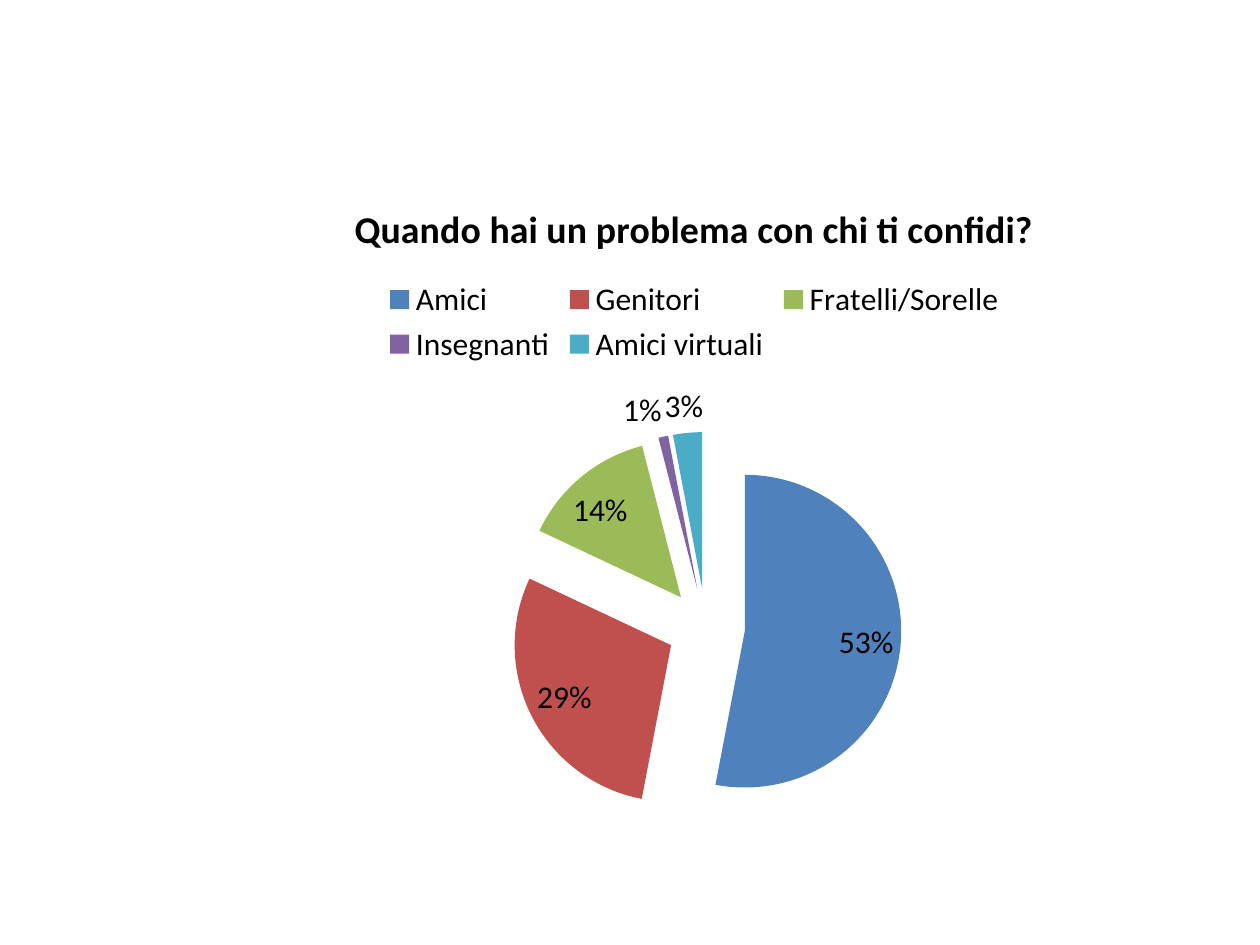
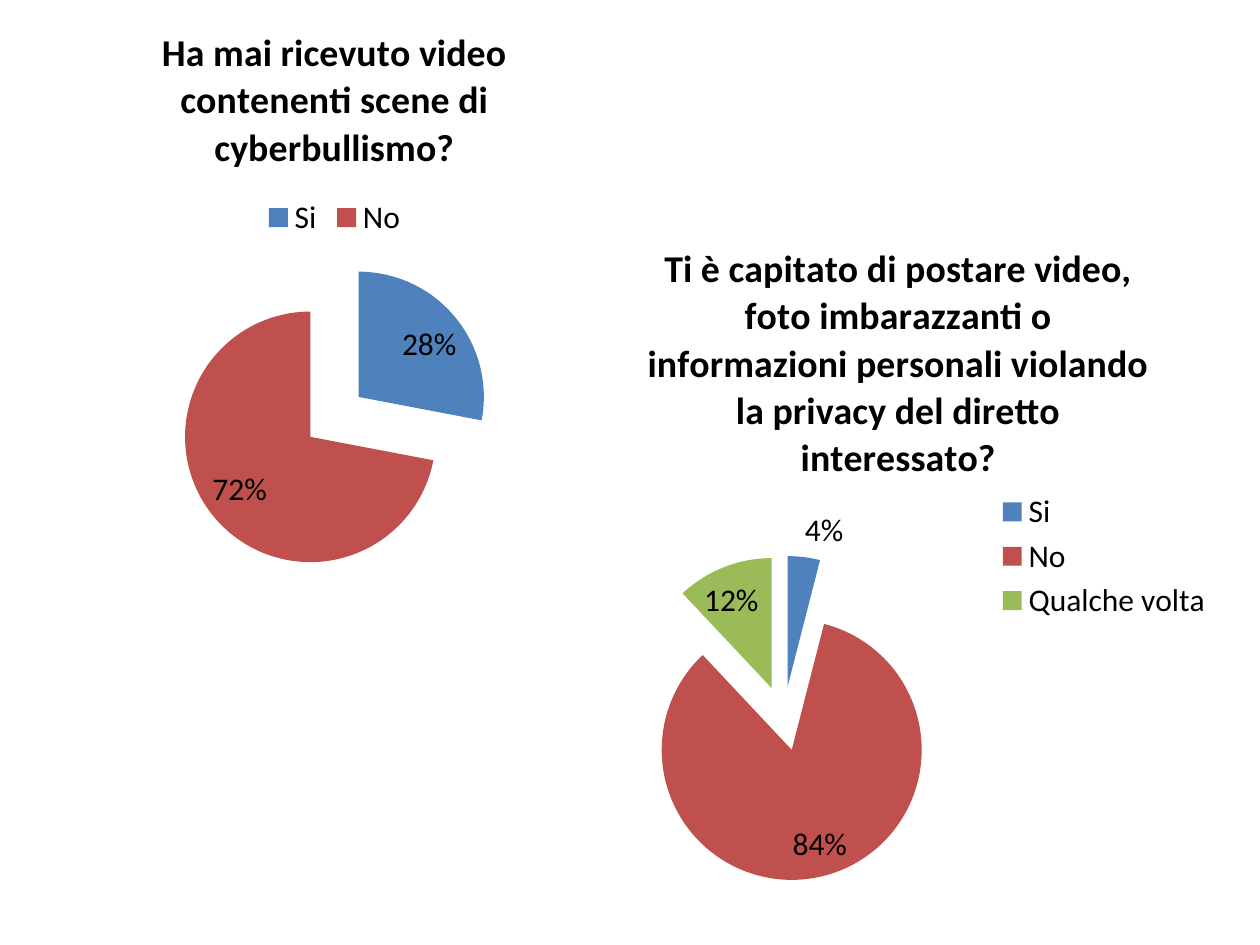
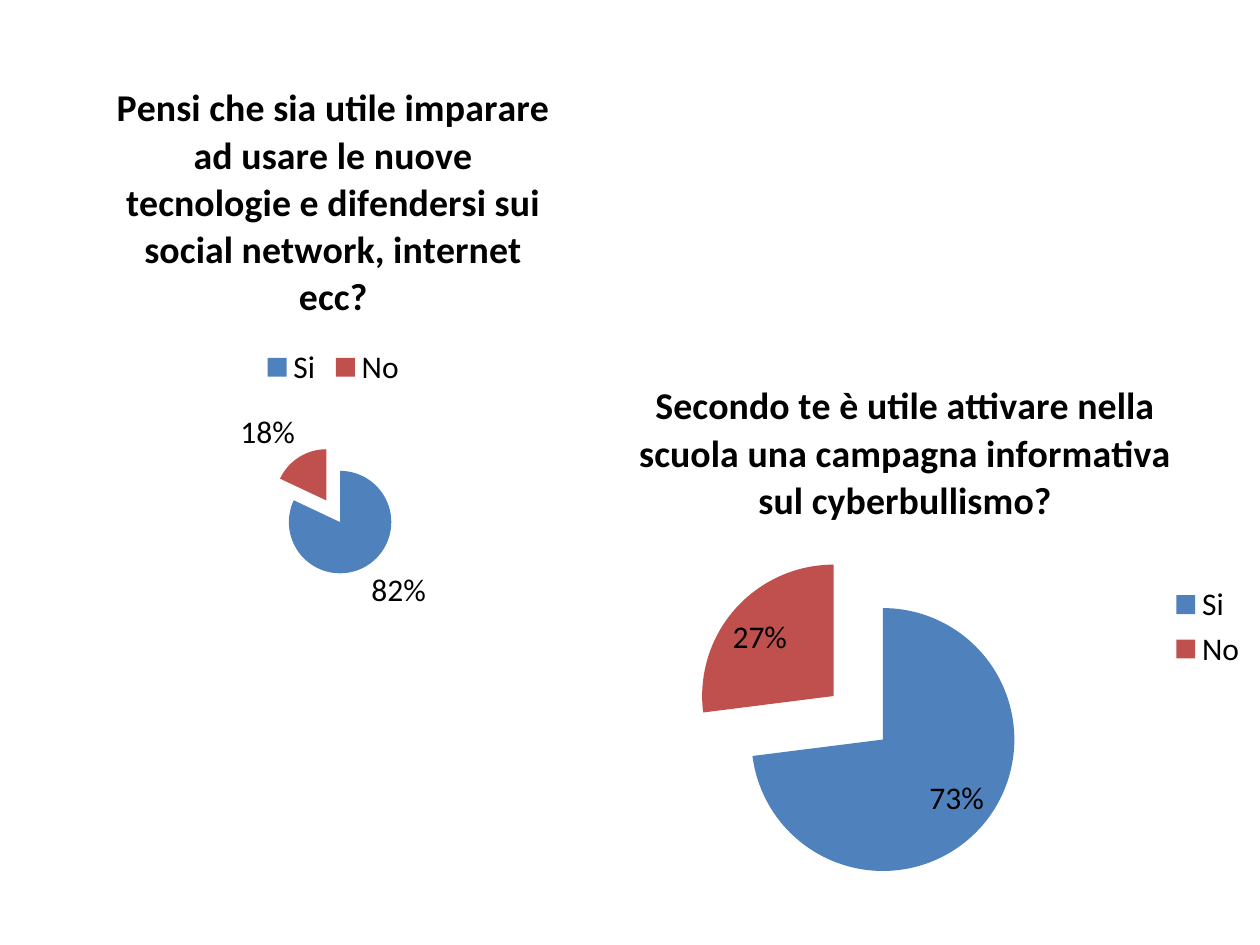
from dataclasses import dataclass

from pptx import Presentation
from pptx.chart.data import CategoryChartData
from pptx.dml.color import RGBColor
from pptx.enum.chart import XL_CHART_TYPE, XL_LABEL_POSITION, XL_LEGEND_POSITION
from pptx.slide import Slide
from pptx.text.text import Font
from pptx.util import Inches, Pt

FONT_NAME = "Calibri"
TEXT_COLOR = "000000"
TEXT_SIZE = 18
TITLE_SIZE = 21.6
SLICE_COLORS = ["4F81BD", "C0504D", "9BBB59", "8064A2", "4BACC6"]
TOP = XL_LEGEND_POSITION.TOP
RIGHT = XL_LEGEND_POSITION.RIGHT


@dataclass(frozen=True)
class SurveyPie:
    question: str
    answers: dict[str, int]
    left: float
    top: float
    width: float
    height: float
    legend: XL_LEGEND_POSITION = TOP
    series_name: str = ""


SURVEY_PAGES = [
    [
        SurveyPie(
            "Quando hai un problema con chi ti confidi?",
            {
                "Amici": 53,
                "Genitori": 29,
                "Fratelli/Sorelle": 14,
                "Insegnanti": 1,
                "Amici virtuali": 3,
            },
            1.69, 1.39, 7.64, 5.28,
        ),
    ],
    [
        SurveyPie(
            "Ha mai ricevuto video contenenti scene di cyberbullismo?",
            {"Si": 28, "No": 72},
            0, 0, 5.31, 4.69,
        ),
        SurveyPie(
            "Ti è capitato di postare video, foto imbarazzanti o informazioni "
            "personali violando la privacy del diretto interessato?",
            {"Si": 4, "No": 84, "Qualche volta": 12},
            4.53, 1.7, 5.2, 5.43,
            legend=RIGHT,
            series_name="Series 1",
        ),
    ],
    [
        SurveyPie(
            "Pensi che sia utile imparare ad usare le nuove tecnologie e "
            "difendersi sui social network, internet ecc?",
            {"Si": 82, "No": 18},
            0.35, 0.44, 4.59, 4.56,
        ),
        SurveyPie(
            "Secondo te è utile attivare nella scuola una campagna informativa "
            "sul cyberbullismo?",
            {"Si": 73, "No": 27},
            4.37, 2.81, 5.63, 4.33,
            legend=RIGHT,
        ),
    ],
]


def color(value: str) -> RGBColor:
    return RGBColor.from_string(value)


def style_font(font: Font, size: float, bold: bool = False) -> None:
    font.name = FONT_NAME
    font.size = Pt(size)
    font.bold = bold
    font.color.rgb = color(TEXT_COLOR)


def add_survey_pie(page: Slide, pie: SurveyPie) -> None:
    data = CategoryChartData()
    data.categories = list(pie.answers)
    data.add_series(pie.series_name or pie.question, list(pie.answers.values()))
    chart = page.shapes.add_chart(
        XL_CHART_TYPE.PIE_EXPLODED,
        Inches(pie.left), Inches(pie.top), Inches(pie.width), Inches(pie.height),
        data,
    ).chart
    style_font(chart.font, TEXT_SIZE)

    chart.has_title = True
    title = chart.chart_title.text_frame
    title.text = pie.question
    style_font(title.paragraphs[0].font, TITLE_SIZE, bold=True)

    chart.has_legend = True
    chart.legend.position = pie.legend
    chart.legend.include_in_layout = False

    plot = chart.plots[0]
    plot.vary_by_categories = True
    for index, slice_color in enumerate(SLICE_COLORS[:len(pie.answers)]):
        fill = plot.series[0].points[index].format.fill
        fill.solid()
        fill.fore_color.rgb = color(slice_color)

    plot.has_data_labels = True
    labels = plot.data_labels
    labels.show_value = False
    labels.show_percentage = True
    labels.number_format = "0%"
    labels.number_format_is_linked = False
    labels.position = XL_LABEL_POSITION.BEST_FIT


def main() -> None:
    deck = Presentation()
    deck.slide_width = Inches(10)
    deck.slide_height = Inches(7.5)
    blank_layout = deck.slide_layouts[6]
    for pies in SURVEY_PAGES:
        page = deck.slides.add_slide(blank_layout)
        for pie in pies:
            add_survey_pie(page, pie)
    deck.save("out.pptx")


if __name__ == "__main__":
    main()
